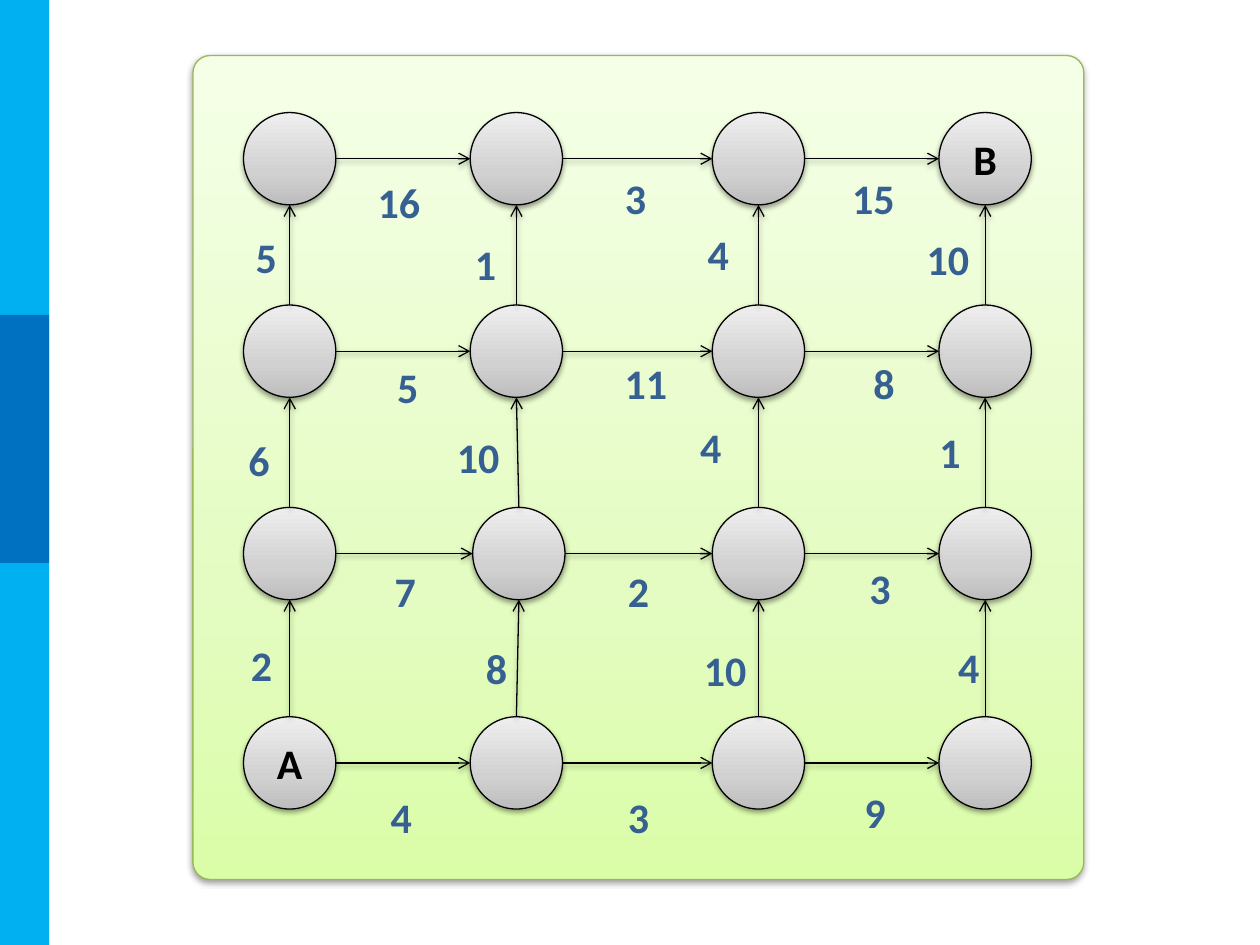
from copy import deepcopy

from pptx import Presentation
from pptx.dml.color import RGBColor
from pptx.enum.shapes import MSO_CONNECTOR, MSO_SHAPE
from pptx.enum.text import MSO_ANCHOR, PP_ALIGN
from pptx.oxml import parse_xml
from pptx.oxml.ns import nsdecls, qn
from pptx.util import Cm, Pt

SHADOW = (
    f'<a:effectLst {nsdecls("a")}><a:outerShdw blurRad="40000" dist="20000" dir="5400000" '
    'rotWithShape="0"><a:srgbClr val="000000"><a:alpha val="38000"/></a:srgbClr>'
    '</a:outerShdw></a:effectLst>'
)
ARROWHEAD = f'<a:tailEnd {nsdecls("a")} type="arrow"/>'
PANEL_GRADIENT = ["DAFDA7", "E4FCC2", "F5FFE7"]
NODE_GRADIENT = ["BDBDBD", "D1D1D1", "EEEEEE"]
color = RGBColor.from_string


def paint(shape, line_color, gradient=()):
    """Outline, optional three-stop upward gradient, and soft shadow."""
    properties = shape._element.spPr
    if gradient:
        shape.fill.gradient()
        shape.fill.gradient_angle = 90
        stop_list = properties.find(qn("a:gradFill")).find(qn("a:gsLst"))
        stop_list.insert(1, deepcopy(stop_list[0]))
        for stop, position, value in zip(shape.fill.gradient_stops, (0, 0.35, 1), gradient):
            stop.position = position
            stop.color.rgb = color(value)
    shape.line.color.rgb = color(line_color)
    shape.line.width = Pt(0.75)
    properties.append(parse_xml(SHADOW))


def write(shape, text, text_color):
    """Centred bold text."""
    frame = shape.text_frame
    frame.word_wrap = True
    frame.vertical_anchor = MSO_ANCHOR.MIDDLE
    paragraph = frame.paragraphs[0]
    paragraph.text = text
    paragraph.alignment = PP_ALIGN.CENTER
    font = paragraph.runs[0].font
    for name, value in {"name": "Calibri", "size": Pt(24), "bold": True}.items():
        setattr(font, name, value)
    font.color.rgb = color(text_color)


presentation = Presentation()
presentation.slide_width = Cm(25.4)
presentation.slide_height = Cm(19.05)
slide = presentation.slides.add_slide(presentation.slide_layouts[6])
shapes = slide.shapes

# Side stripe
for top, height, value in [(0, 19.05, "00B0F0"), (6.35, 5, "0070C0")]:
    stripe = shapes.add_shape(MSO_SHAPE.RECTANGLE, 0, Cm(top), Cm(0.99), Cm(height))
    stripe.fill.solid()
    stripe.fill.fore_color.rgb = color(value)
    stripe.line.fill.background()
    stripe.shadow.inherit = False

# Panel behind the graph
panel = shapes.add_shape(MSO_SHAPE.ROUNDED_RECTANGLE, Cm(3.89), Cm(1.12), Cm(17.96), Cm(16.61))
panel.adjustments[0] = 0.021
paint(panel, "98B955", PANEL_GRADIENT)

# Nodes, by row and column
column_centers = [5.84, 10.41, 15.29, 19.86]
row_centers = [3.2, 7.08, 11.16, 15.38]
radius = 0.93
node_names = {(3, 0): "A", (0, 3): "B"}
centers = {
    (row, column): (x, y)
    for row, y in enumerate(row_centers)
    for column, x in enumerate(column_centers)
}
centers[2, 1] = (10.46, 11.16)
for place, (x, y) in centers.items():
    node = shapes.add_shape(
        MSO_SHAPE.OVAL, Cm(x - radius), Cm(y - radius), Cm(2 * radius), Cm(2 * radius)
    )
    paint(node, "000000", NODE_GRADIENT)
    if place in node_names:
        write(node, node_names[place], "000000")

# Arrows to the right and upward neighbours
for (row, column), (x, y) in centers.items():
    for row_step, column_step in [(0, 1), (-1, 0)]:
        neighbour = (row + row_step, column + column_step)
        if neighbour not in centers:
            continue
        end_x, end_y = centers[neighbour]
        dx, dy = column_step * radius, row_step * radius
        arrow = shapes.add_connector(
            MSO_CONNECTOR.STRAIGHT, Cm(x + dx), Cm(y + dy), Cm(end_x - dx), Cm(end_y - dy)
        )
        paint(arrow, "000000")
        arrow.line._get_or_add_ln().append(parse_xml(ARROWHEAD))

# Edge weights: box size, then text and box centre
weights = {
    (3.02, 1.73): [
        ("16", 8.04, 4.06), ("3", 12.81, 3.99), ("15", 17.61, 3.99),
        ("5", 8.22, 7.8), ("11", 13.02, 7.72), ("8", 17.82, 7.72),
        ("7", 8.17, 11.91), ("2", 12.87, 11.91), ("3", 17.74, 11.84),
        ("5", 5.37, 5.18), ("6", 5.22, 9.27),
    ],
    (2.72, 1.7): [
        ("1", 9.79, 5.32), ("10", 19.11, 5.22), ("10", 9.64, 9.21), ("10", 14.62, 13.5),
    ],
    (2.03, 1.8): [
        ("4", 14.48, 5.12), ("4", 14.33, 9), ("1", 19.15, 9.11),
        ("8", 10.01, 13.47), ("4", 19.53, 13.45),
    ],
    (1.8, 1.57): [
        ("2", 5.27, 13.41), ("4", 8.09, 16.46), ("3", 12.87, 16.46), ("9", 17.64, 16.36),
    ],
}
for (width, height), labels in weights.items():
    for text, x, y in labels:
        label = shapes.add_textbox(
            Cm(x - width / 2), Cm(y - height / 2), Cm(width), Cm(height)
        )
        write(label, text, "376092")

presentation.save("out.pptx")
